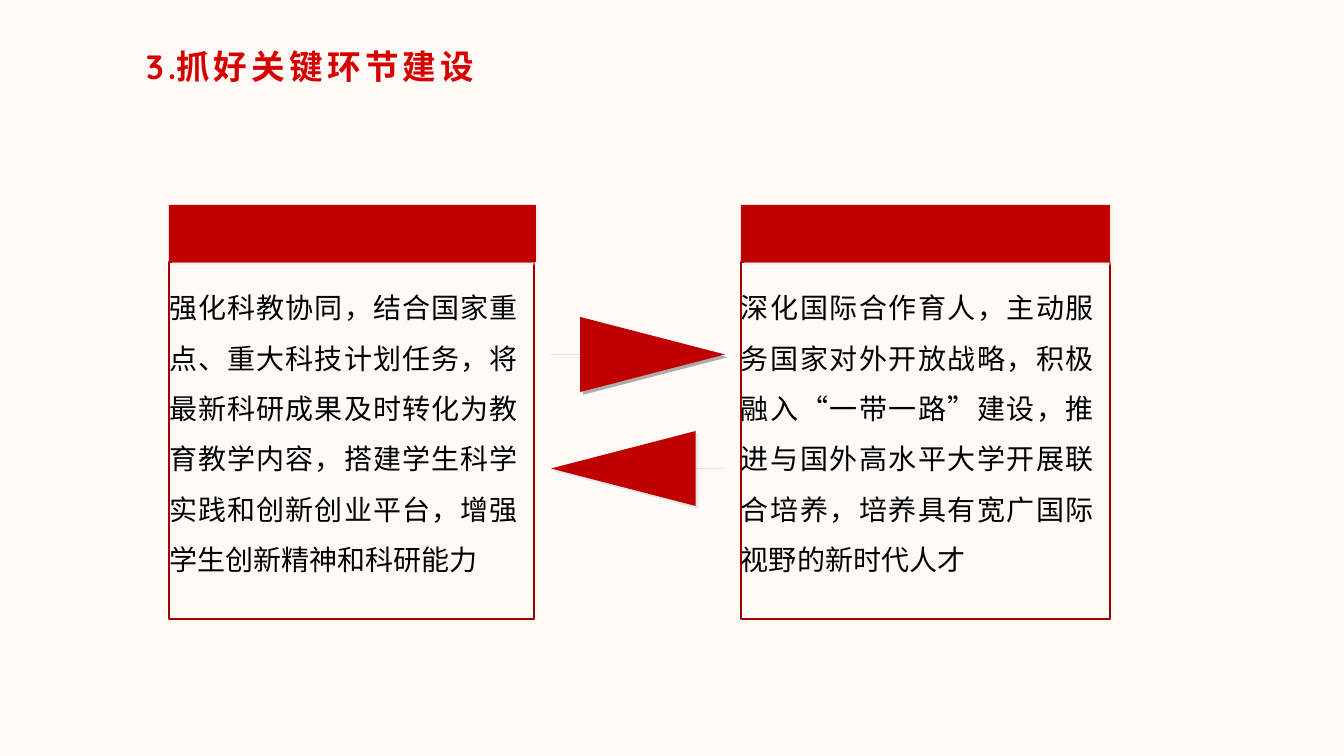
from lxml.etree import SubElement
from pptx import Presentation
from pptx.dml.color import RGBColor
from pptx.enum.shapes import MSO_SHAPE
from pptx.enum.text import MSO_ANCHOR, MSO_AUTO_SIZE, PP_ALIGN
from pptx.oxml import parse_xml
from pptx.oxml.ns import qn
from pptx.util import Emu, Pt

CHINESE, LATIN = "Noto Sans CJK SC", "Quicksand"
RED, BORDER, TITLE_RED = "C00000", "A10000", "D70000"
PALE_SHADOW, DARK_SHADOW = "E7E6E6", "5F5F5F"

# text, font, letter spacing in points
TITLE = [("3", LATIN, 3), (".", LATIN, 0), ("抓好关键环节建设", CHINESE, 3)]
# left, header width, body width, text
PANELS = [
    (169, 367, 365, "强化科教协同，结合国家重点、重大科技计划任务，将最新科研成果及时转化为教育教学内容，"
                    "搭建学生科学实践和创新创业平台，增强学生创新精神和科研能力"),
    (741, 369, 369, "深化国际合作育人，主动服务国家对外开放战略，积极融入“一带一路”建设，"
                    "推进与国外高水平大学开展联合培养，培养具有宽广国际视野的新时代人才"),
]
# top, points left, shadow colour, shadow opacity in percent
ARROWS = [(317, False, DARK_SHADOW, 50), (431, True, PALE_SHADOW, 100)]
HEADER_TOP, HEADER_HEIGHT, BODY_HEIGHT = 205, 57, 357
ARROW_LEFT, ARROW_WIDTH, ARROW_HEIGHT = 551, 174, 75


def px(length):
    return Emu(round(length * 914400 / 100.8))


def colour(value):
    return RGBColor.from_string(value)


def add_span(para, text, font, size, ink, spacing=0, bold=False):
    span = para.add_run()
    span.text = text
    span.font.name, span.font.size, span.font.bold = font, Pt(size), bold
    span.font.color.rgb = colour(ink)
    properties = span.font._element
    properties.set("spc", str(spacing * 100))
    SubElement(properties, qn("a:ea")).set("typeface", font)


def add_red_shape(page, kind, left, top, width, height, shade, opacity):
    """Add a solid red shape with a hard shadow to the lower right."""
    shape = page.shapes.add_shape(kind, px(left), px(top), px(width), px(height))
    shape.fill.solid()
    shape.fill.fore_color.rgb = colour(RED)
    shape.line.fill.background()
    shape.shadow.inherit = False
    effects = shape._element.spPr.find(qn("a:effectLst"))
    effects.append(parse_xml(
        '<a:outerShdw xmlns:a="http://schemas.openxmlformats.org/drawingml/2006/main" '
        f'dist="{Pt(2.8)}" dir="2700000" algn="ctr" rotWithShape="0">'
        f'<a:srgbClr val="{shade}"><a:alpha val="{opacity * 1000}"/></a:srgbClr>'
        '</a:outerShdw>'))
    return shape


def add_title(page):
    title = page.shapes.title
    title.left, title.top, title.width, title.height = map(px, (136, 41, 946, 50))
    frame = title.text_frame
    frame.auto_size = MSO_AUTO_SIZE.NONE
    frame.vertical_anchor = MSO_ANCHOR.MIDDLE
    para = frame.paragraphs[0]
    para.alignment = PP_ALIGN.LEFT
    para.space_before = Pt(0)
    for text, font, spacing in TITLE:
        add_span(para, text, font, 24, TITLE_RED, spacing, bold=True)


def add_arrow(page, top, points_left, shade, opacity):
    arrow = add_red_shape(page, MSO_SHAPE.RIGHT_ARROW, ARROW_LEFT, top,
                          ARROW_WIDTH, ARROW_HEIGHT, shade, opacity)
    arrow.adjustments[0] = 0
    arrow.adjustments[1] = 1.93
    if points_left:
        arrow._element.spPr.find(qn("a:xfrm")).set("flipH", "1")


def add_panel(page, left, header_width, body_width, text):
    body = page.shapes.add_shape(
        MSO_SHAPE.RECTANGLE, px(left), px(HEADER_TOP + HEADER_HEIGHT),
        px(body_width), px(BODY_HEIGHT))
    body.shadow.inherit = False
    body.fill.background()
    body.line.color.rgb = colour(BORDER)
    body.line.width = Pt(1.5)
    frame = body.text_frame
    frame.word_wrap = True
    frame.vertical_anchor = MSO_ANCHOR.TOP
    frame.margin_left, frame.margin_top = px(0), px(12)
    frame.margin_right, frame.margin_bottom = px(16), px(8)
    para = frame.paragraphs[0]
    para.alignment = PP_ALIGN.JUSTIFY
    para.line_spacing = 1.5
    add_span(para, text, CHINESE, 20, "000000")
    add_red_shape(page, MSO_SHAPE.RECTANGLE, left, HEADER_TOP,
                  header_width, HEADER_HEIGHT, PALE_SHADOW, 50)


def main():
    deck = Presentation()
    deck.slide_width, deck.slide_height = px(1344), px(756)
    page = deck.slides.add_slide(deck.slide_layouts[5])
    page.background.fill.solid()
    page.background.fill.fore_color.rgb = colour("FFFAF5")
    add_title(page)
    for arrow in ARROWS:
        add_arrow(page, *arrow)
    for panel in PANELS:
        add_panel(page, *panel)
    deck.save("out.pptx")


if __name__ == "__main__":
    main()
